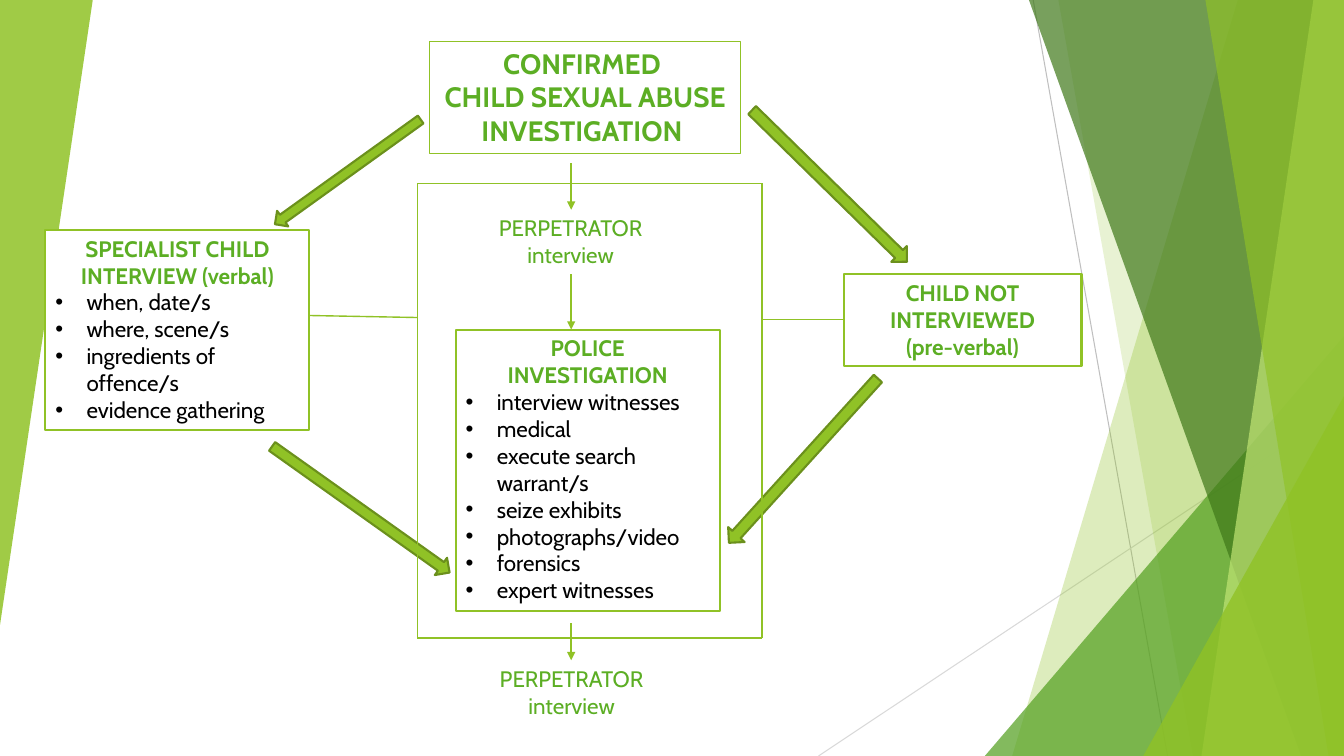
import pptx
import pptx.dml.color
import pptx.enum.shapes
import pptx.enum.text
import pptx.oxml.ns
import pptx.util
from lxml import etree

qn = pptx.oxml.ns.qn
RGB = pptx.dml.color.RGBColor
SHAPE = pptx.enum.shapes.MSO_SHAPE
ALIGN = pptx.enum.text.PP_ALIGN

LEAF = RGB(0x90, 0xC2, 0x26)
GRASS = RGB(0x54, 0xA0, 0x21)
FOREST = RGB(0x3F, 0x78, 0x19)
LIME = RGB(0xC0, 0xE4, 0x74)
OLIVE = RGB(0x6B, 0x90, 0x1C)
HEADING = RGB(0x5C, 0xAE, 0x24)
BLACK = RGB(0, 0, 0)
WHITE = RGB(0xFF, 0xFF, 0xFF)
SILVER = RGB(0xBF, 0xBF, 0xBF)
PALE = RGB(0xD9, 0xD9, 0xD9)

# The slide is a grid of square cells, 160 columns by 90 rows
COLUMNS, ROWS = 160, 90
CELL = pptx.util.Inches(1) / 12

deck = pptx.Presentation()
deck.slide_width = round(COLUMNS * CELL)
deck.slide_height = round(ROWS * CELL)
slide = deck.slides.add_slide(deck.slide_layouts[6])
shapes = slide.shapes


def write_text(frame, text, size=16, color=HEADING, bold=False,
               align=ALIGN.CENTER, bullet=False):
    """Add one paragraph, using the empty first one if it is still free."""
    first = frame.paragraphs[0]
    paragraph = frame.add_paragraph() if first.runs else first
    paragraph.alignment = align
    run = paragraph.add_run()
    run.text = text
    run.font.name = "Cabin"
    run.font.size = pptx.util.Pt(size)
    run.font.bold = bold
    run.font.color.rgb = color
    if bullet:
        indent = pptx.util.Inches(0.31)
        properties = paragraph._p.get_or_add_pPr()
        properties.set("marL", str(indent))
        properties.set("indent", str(-indent))
        etree.SubElement(properties, qn("a:buFont"), typeface="Arial")
        etree.SubElement(properties, qn("a:buChar"), char="•")


def draw_line(x1, y1, x2, y2, color=LEAF, width=1, arrow=False):
    """Draw a straight line between two grid points."""
    line = shapes.add_connector(
        pptx.enum.shapes.MSO_CONNECTOR.STRAIGHT,
        *(round(v * CELL) for v in (x1, y1, x2, y2)))
    line.line.color.rgb = color
    line.line.width = pptx.util.Pt(width)
    if arrow:
        etree.SubElement(line.line._get_or_add_ln(), qn("a:tailEnd"), type="triangle")
    etree.SubElement(line._element.spPr, qn("a:effectLst"))


# Background: thin lines, then translucent facets
draw_line(123, 0, 139, ROWS, color=SILVER, width=0.75)
draw_line(COLUMNS, 48.36, 97.44, ROWS, color=PALE, width=0.75)

# Bands run to the right edge from (top x, bottom x); triangles have a box
facets = [
    ("band", (147.36, 120.5), LEAF, 30, 0),
    ("band", (126, 142), LEAF, 20, 0),
    ("triangle", (117.24, 40, 42.76, 50), GRASS, 72, 0),
    ("band", (122.5, 154.9), FOREST, 70, 0),
    ("band", (156.36, 143.04), LIME, 70, 0),
    ("band", (143.5, 158.16), LEAF, 65, 0),
    ("triangle", (136.1, 47.16, 23.9, 42.84), LEAF, 80, 0),
    ("triangle", (0, 0, 11.04, 74.4), LEAF, 85, 180),
]
for kind, place, color, opacity, turn in facets:
    if kind == "band":
        top, bottom = (round(x * CELL) for x in place)
        builder = shapes.build_freeform(top, 0)
        builder.add_line_segments([
            (deck.slide_width, 0), (deck.slide_width, deck.slide_height),
            (bottom, deck.slide_height)])
        facet = builder.convert_to_shape()
    else:
        facet = shapes.add_shape(SHAPE.ISOSCELES_TRIANGLE,
                                 *(round(v * CELL) for v in place))
        facet.adjustments[0] = 1
    facet.rotation = turn
    facet.shadow.inherit = False
    facet.line.fill.background()
    facet.fill.solid()
    facet.fill.fore_color.rgb = color
    tint = facet._element.spPr.find(".//" + qn("a:srgbClr"))
    etree.SubElement(tint, qn("a:alpha"), val=str(opacity * 1000))

# Boxes: place, fill, border width, heading size, headings, bullets
boxes = [
    ((51.12, 4.92, 37.08, 13.32), None, 0.75, 20,
     ["CONFIRMED ", "CHILD SEXUAL ABUSE INVESTIGATION "], []),
    ((5.4, 27.36, 31.44, 23.88), WHITE, 1.5, 16,
     ["SPECIALIST CHILD INTERVIEW (verbal)"],
     ["when, date/s", "where, scene/s", "ingredients of offence/s",
      "evidence gathering"]),
    ((100.44, 32.64, 28.32, 10.92), WHITE, 1.5, 16,
     ["CHILD NOT INTERVIEWED", "(pre-verbal)"], []),
    ((54.24, 39.24, 31.44, 33.48), WHITE, 1.5, 16,
     ["POLICE", "INVESTIGATION"],
     ["interview witnesses", "medical", "execute search warrant/s",
      "seize exhibits", "photographs/video", "forensics", "expert witnesses"]),
]
for place, fill, border, size, headings, bullets in boxes:
    box = shapes.add_shape(SHAPE.RECTANGLE, *(round(v * CELL) for v in place))
    box.shadow.inherit = False
    box.line.color.rgb = LEAF
    box.line.width = pptx.util.Pt(border)
    if fill is None:
        box.fill.background()
    else:
        box.fill.solid()
        box.fill.fore_color.rgb = fill
    box.text_frame.word_wrap = True
    box.text_frame.vertical_anchor = pptx.enum.text.MSO_ANCHOR.TOP
    box.text_frame.auto_size = pptx.enum.text.MSO_AUTO_SIZE.SHAPE_TO_FIT_TEXT
    for heading in headings:
        write_text(box.text_frame, heading, size=size, bold=True)
    for item in bullets:
        write_text(box.text_frame, item, color=BLACK, align=ALIGN.LEFT, bullet=True)

# Perpetrator interviews, before and after the police investigation
for place in [(58.2, 24.96, 19.68, 7.68), (58.32, 78.6, 19.92, 7.68)]:
    interview = shapes.add_textbox(*(round(v * CELL) for v in place))
    interview.text_frame.word_wrap = False
    write_text(interview.text_frame, "PERPETRATOR", align=ALIGN.LEFT)
    write_text(interview.text_frame, "interview")

# Block arrows between the boxes
block_arrows = [
    (SHAPE.RIGHT_ARROW, (30.72, 19.32, 21.36, 2.28), 144.3),
    (SHAPE.DOWN_ARROW, (97.44, 9.24, 2.64, 25.8), 314.4),
    (SHAPE.RIGHT_ARROW, (30, 59.4, 25.92, 2.52), 35.4),
    (SHAPE.RIGHT_ARROW, (82.44, 53.52, 26.4, 2.64), 132.2),
]
for kind, place, turn in block_arrows:
    block_arrow = shapes.add_shape(kind, *(round(v * CELL) for v in place))
    block_arrow.rotation = turn
    block_arrow.shadow.inherit = False
    block_arrow.fill.solid()
    block_arrow.fill.fore_color.rgb = LEAF
    block_arrow.line.color.rgb = OLIVE
    block_arrow.line.width = pptx.util.Pt(1.5)

# Thin arrows down the middle
for start, end in [(74.2, 78.6), (32.64, 39.24), (19.44, 24.96)]:
    draw_line(68, start, 68, end, arrow=True)

# Frame around the investigation, and its links to the side boxes
left, top, right, bottom = 49.68, 21.84, 90.72, 75.96
corners = [(left, top), (right, top), (right, bottom), (left, bottom)]
for corner, following in zip(corners, corners[1:] + corners[:1]):
    draw_line(*corner, *following)
draw_line(100.44, 38.04, right, 38.04)
draw_line(36.84, 37.56, left, 37.8)

deck.save("out.pptx")
